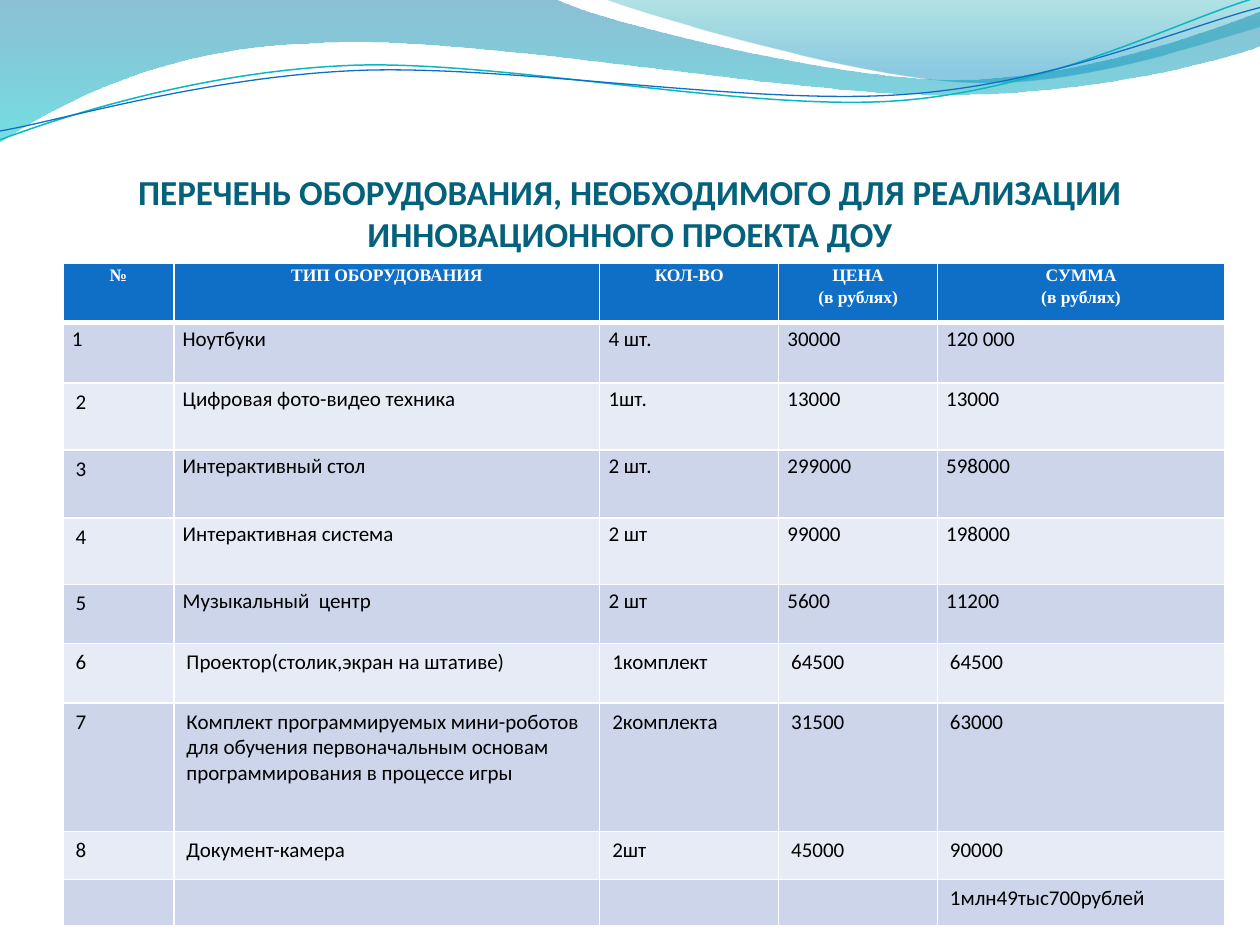
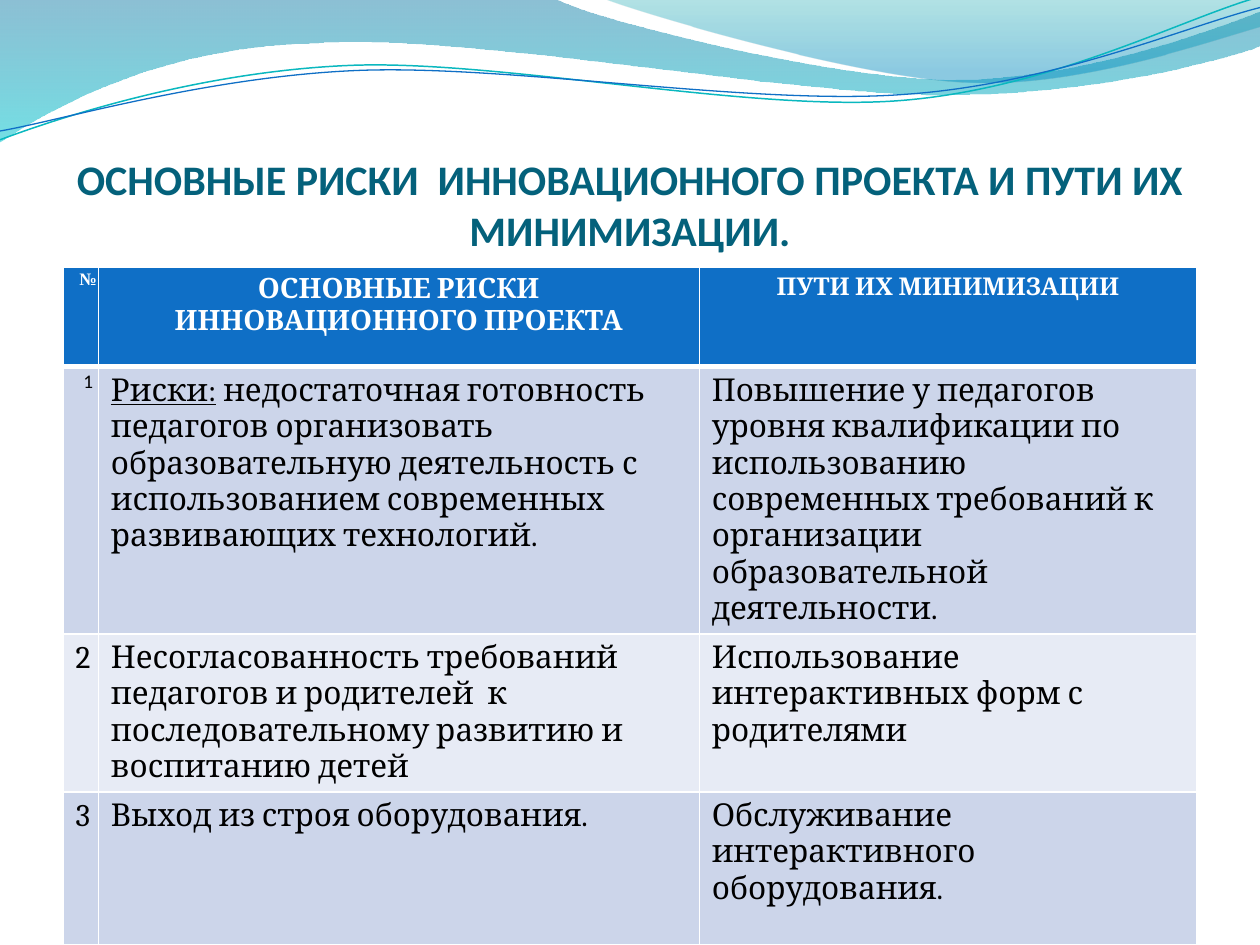
from lxml.etree import SubElement
from pptx import Presentation
from pptx.dml.color import RGBColor
from pptx.enum.text import MSO_ANCHOR, MSO_AUTO_SIZE, PP_ALIGN
from pptx.oxml.ns import qn
from pptx.util import Inches, Pt

HEX = {
    "title": "04617B", "head": "0F6FC6", "odd": "CCD5EA", "even": "E7EBF5",
    "white": "FFFFFF", "black": "000000", "teal": "0AB8BF",
    "deep": "0074A1", "aqua": "00C6CF", "sea": "00A1A9", "sky": "008BBF",
}

# Each wave: start, then segments of one point (line) or three (curve).
# Fill stops: position, colour, opacity in percent.
WAVES = [
    {"start": (0, 0), "stops": [(0, "deep", 45), (1, "aqua", 55)], "parts": [
        [(4.4, -0.01)],
        [(4.76, 0.17), (6.64, 0.63), (7.58, 0.63)],
        [(8.53, 0.63), (9.58, 0.26), (10, 0.09)],
        [(10.01, 0.36)],
        [(9.83, 0.44), (8.7, 0.76), (7.46, 0.75)],
        [(6.22, 0.75), (3.82, 0.28), (2.57, 0.34)],
        [(1.29, 0.36), (0.46, 0.83), (-0.01, 1.13)]]},
    {"start": (4.79, -0.01), "stops": [(0, "sea", 30), (0.8, "sky", 45)], "parts": [
        [(5.09, 0.11), (6.82, 0.62), (7.69, 0.65)],
        [(8.56, 0.69), (9.61, 0.32), (10, 0.21)],
        [(10, 0)]]},
    {"start": (0, 1.11), "line": ("teal", 0.85), "parts": [
        [(0.48, 0.93), (1.58, 0.57), (2.77, 0.52)],
        [(3.95, 0.47), (5.93, 0.89), (7.13, 0.8)],
        [(8.33, 0.71), (9.38, 0.15), (9.98, -0.02)]]},
    {"start": (0, 1.04), "line": ("head", 0.75), "parts": [
        [(0.47, 0.96), (1.64, 0.61), (2.83, 0.56)],
        [(4.03, 0.51), (5.97, 0.84), (7.17, 0.75)],
        [(8.36, 0.67), (9.41, 0.21), (10, 0.06)]]},
]

TIGHT = {"margin_left": Inches(0.07), "margin_right": Inches(0.07),
         "margin_top": 0, "margin_bottom": 0}
MID = {"alignment": PP_ALIGN.CENTER}
WIDE = {"line_spacing": 1.15}
PUSH = {**MID, **WIDE, "space_before": Pt(6)}


def style(name, size, color="black", bold=False, para=None, cell=None, indent=0):
    font = {"name": name, "size": Pt(size), "bold": bold}
    return {"font": font, "color": color, "para": para or {},
            "cell": cell or {}, "indent": indent}


STYLES = {
    "head": style("Times New Roman", 10, "white", True, {**MID, **WIDE}, TIGHT),
    "tight": style("Calibri", 12, para=WIDE, cell=TIGHT),
    "plain": style("Calibri", 12),
    "mark": style("Times New Roman", 10, "white", True, PUSH, TIGHT, 0.12),
    "first": style("Calibri", 11, para=PUSH, cell=TIGHT, indent=0.12),
    "risk": style("Cambria", 16, "white", True, MID),
    "way": style("Cambria", 14, "white", True, MID),
    "num": style("Cambria", 18, para=MID),
    "body": style("Cambria", 18),
}
MIXED = ["plain"] + ["tight"] * 4
PLAIN = ["plain"] * 5
POINT = ["num", "body", "body"]
LEAD = "Риски:"

# Each row: height, cell styles, texts.
SLIDES = [
    {"title": "ПЕРЕЧЕНЬ ОБОРУДОВАНИЯ, НЕОБХОДИМОГО ДЛЯ РЕАЛИЗАЦИИ\v"
              "ИННОВАЦИОННОГО ПРОЕКТА ДОУ",
     "size": 20, "top": 2.09, "cols": [0.88, 3.38, 1.42, 1.26, 2.28],
     "rows": [
         (0.47, ["head"] * 5, ["№", "ТИП ОБОРУДОВАНИЯ", "КОЛ-ВО",
                               "ЦЕНА\n(в рублях)", "СУММА\n(в рублях)"]),
         (0.48, ["tight"] * 5, ["1", "Ноутбуки", "4 шт.", "30000", "120 000"]),
         (0.53, MIXED, ["2", "Цифровая фото-видео техника", "1шт.", "13000", "13000"]),
         (0.54, MIXED, ["3", "Интерактивный стол", "2 шт.", "299000", "598000"]),
         (0.53, MIXED, ["4", "Интерактивная система", "2 шт", "99000", "198000"]),
         (0.47, MIXED, ["5", "Музыкальный  центр", "2 шт", "5600", "11200"]),
         (0.47, PLAIN, ["6", "Проектор(столик,экран на штативе)", "1комплект",
                        "64500", "64500"]),
         (1.02, PLAIN, ["7", "Комплект программируемых мини-роботов для обучения "
                        "первоначальным основам программирования в процессе игры",
                        "2комплекта", "31500", "63000"]),
         (0.38, PLAIN, ["8", "Документ-камера", "2шт", "45000", "90000"]),
         (0.37, PLAIN, ["", "", "", "", "1млн49тыс700рублей"]),
     ]},
    {"title": "ОСНОВНЫЕ РИСКИ  ИННОВАЦИОННОГО ПРОЕКТА И ПУТИ ИХ МИНИМИЗАЦИИ.",
     "size": 24, "top": 2.12, "cols": [0.28, 4.77, 3.95],
     "rows": [
         (0.79, ["mark", "risk", "way"],
          ["№", "ОСНОВНЫЕ РИСКИ ИННОВАЦИОННОГО ПРОЕКТА", "ПУТИ ИХ МИНИМИЗАЦИИ"]),
         (1.83, ["first", "body", "body"],
          ["1", "Риски: недостаточная готовность педагогов организовать "
           "образовательную деятельность с использованием современных "
           "развивающих технологий.",
           "Повышение у педагогов\nуровня квалификации по использованию "
           "современных требований к организации образовательной деятельности."]),
         (1.21, POINT,
          ["2", "Несогласованность требований педагогов и родителей  к "
           "последовательному развитию и воспитанию детей",
           "Использование интерактивных форм с родителями"]),
         (1.21, POINT,
          ["3", "Выход из строя оборудования.",
           "Обслуживание интерактивного оборудования."]),
     ]},
]


def rgb(name):
    return RGBColor.from_string(HEX[name])


def apply(obj, values):
    for key, value in values.items():
        setattr(obj, key, value)


def bend(shape, parts):
    """Join the three line steps of each curved part into one cubic curve."""
    steps = iter(list(shape.element.iter(qn("a:lnTo"))))
    for part in parts:
        group = [next(steps) for _ in part]
        if len(part) == 3:
            curve = SubElement(group[0].getparent(), qn("a:cubicBezTo"))
            group[0].addprevious(curve)
            for step in group:
                curve.append(step[0])
                step.getparent().remove(step)


def add_wave(slide, wave):
    spots = [wave["start"], *(spot for part in wave["parts"] for spot in part)]
    spots = [(Inches(x), Inches(y)) for x, y in spots]
    pen = slide.shapes.build_freeform(*spots[0])
    pen.add_line_segments(spots[1:], close="stops" in wave)
    shape = pen.convert_to_shape()
    bend(shape, wave["parts"])
    shape.shadow.inherit = False
    if "line" in wave:
        color, width = wave["line"]
        shape.fill.background()
        shape.line.color.rgb = rgb(color)
        shape.line.width = Pt(width)
        return shape
    shape.line.fill.background()
    shape.fill.gradient()
    shape.fill.gradient_angle = 270
    for stop, (place, color, _) in zip(shape.fill.gradient_stops, wave["stops"]):
        stop.position = place
        stop.color.rgb = rgb(color)
    tones = shape.element.spPr.iter(qn("a:srgbClr"))
    for tone, (_, _, alpha) in zip(tones, wave["stops"]):
        SubElement(tone, qn("a:alpha")).set("val", str(alpha * 1000))
    return shape


def set_title(slide, text, size):
    box = slide.shapes.title
    apply(box, {"left": Inches(0.5), "top": Inches(0.77),
                "width": Inches(9), "height": Inches(1.25)})
    frame = box.text_frame
    apply(frame, {"margin_left": 0, "margin_right": 0, "margin_bottom": 0,
                  "margin_top": Inches(0.05), "word_wrap": True,
                  "auto_size": MSO_AUTO_SIZE.NONE,
                  "vertical_anchor": MSO_ANCHOR.BOTTOM})
    para = frame.paragraphs[0]
    para.text = text
    para.alignment = PP_ALIGN.CENTER
    for run in para.runs:
        apply(run.font, {"name": "Calibri", "size": Pt(size), "bold": True})
        run.font.color.rgb = rgb("title")


def set_edges(cell, top, bottom):
    props = cell._tc.get_or_add_tcPr()
    widths = {"a:lnL": 1, "a:lnR": 1, "a:lnT": top, "a:lnB": bottom}
    for i, (tag, width) in enumerate(widths.items()):
        edge = SubElement(props, qn(tag), w=str(Pt(width)))
        fill = SubElement(edge, qn("a:solidFill"))
        SubElement(fill, qn("a:srgbClr"), val=HEX["white"])
        props.insert(i, edge)


def fill_cell(cell, text, look):
    apply(cell, look["cell"])
    frame = cell.text_frame
    for i, line in enumerate(text.split("\n")):
        para = frame.add_paragraph() if i else frame.paragraphs[0]
        apply(para, look["para"])
        if look["indent"]:
            props = para._p.get_or_add_pPr()
            props.set("marL", str(Inches(look["indent"])))
            props.set("indent", "0")
        if not line:
            size = int(look["font"]["size"].pt * 100)
            para._p.get_or_add_endParaRPr().set("sz", str(size))
            continue
        lead = LEAD if line.startswith(LEAD) else ""
        for part in filter(None, (lead, line[len(lead):])):
            run = para.add_run()
            run.text = part
            apply(run.font, look["font"])
            run.font.color.rgb = rgb(look["color"])
            if part == LEAD:
                run.font.underline = True


def add_grid(slide, top, cols, rows):
    heights = [row[0] for row in rows]
    table = slide.shapes.add_table(
        len(rows), len(cols), Inches(0.5), Inches(top),
        Inches(sum(cols)), Inches(sum(heights))).table
    for col, width in zip(table.columns, cols):
        col.width = Inches(width)
    for r, (height, looks, texts) in enumerate(rows):
        table.rows[r].height = Inches(height)
        shade = "head" if r == 0 else "odd" if r % 2 else "even"
        for c, (look, text) in enumerate(zip(looks, texts)):
            cell = table.cell(r, c)
            fill_cell(cell, text, STYLES[look])
            cell.fill.solid()
            cell.fill.fore_color.rgb = rgb(shade)
            set_edges(cell, 3 if r == 1 else 1, 3 if r == 0 else 1)


def main():
    deck = Presentation()
    deck.slide_width, deck.slide_height = Inches(10), Inches(7.5)
    layout = deck.slide_layouts[5]
    for n, page in enumerate(SLIDES):
        slide = deck.slides.add_slide(layout)
        if n == 0:  # the waves move to the layout, so every slide shows them
            for i, wave in enumerate(WAVES):
                shape = add_wave(slide, wave)
                layout.shapes.element.insert(2 + i, shape.element)
        set_title(slide, page["title"], page["size"])
        add_grid(slide, page["top"], page["cols"], page["rows"])
    deck.save("out.pptx")


if __name__ == "__main__":
    main()
